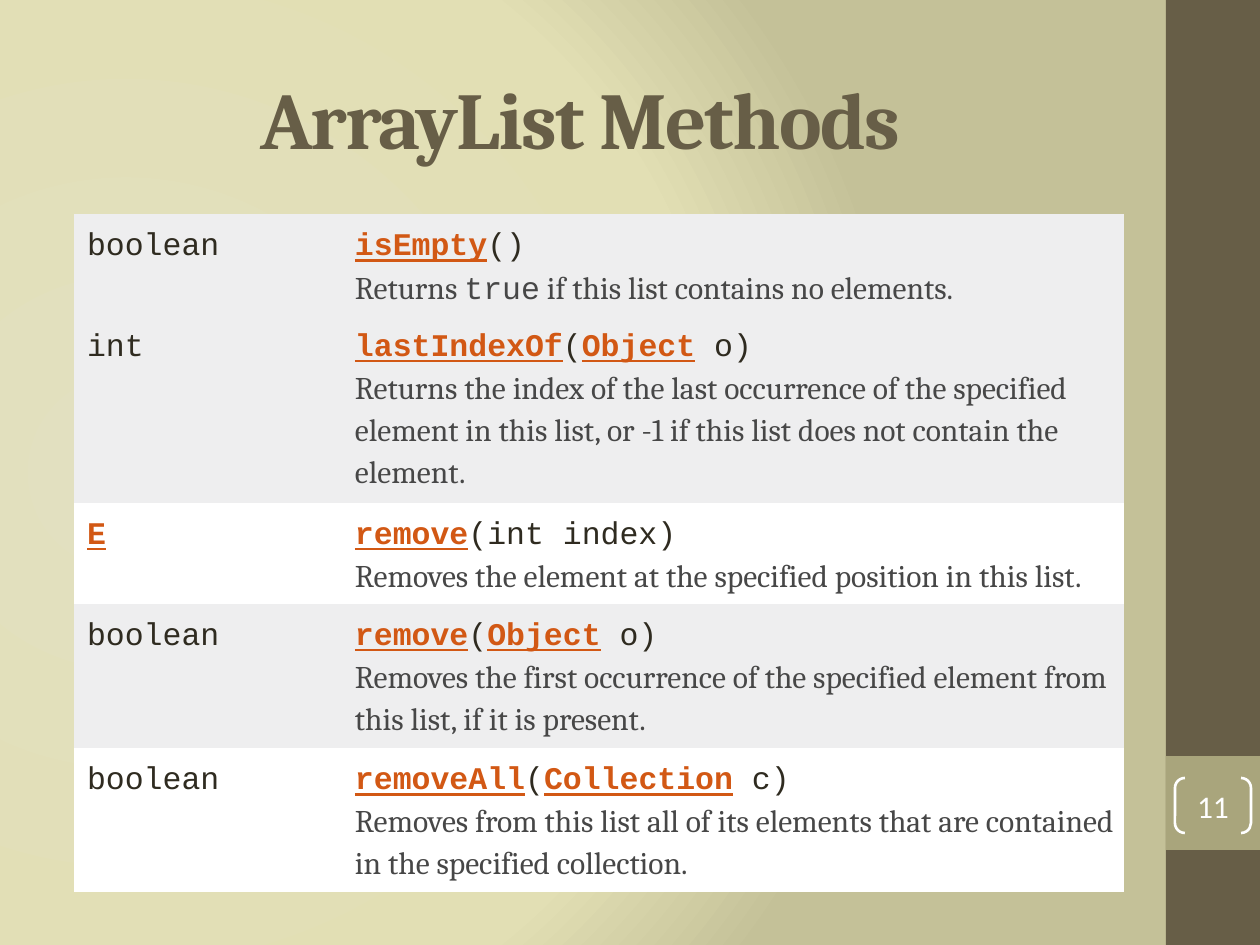
from dataclasses import dataclass

import lxml.etree
import pptx
import pptx.dml.color
import pptx.enum.shapes
import pptx.enum.text
import pptx.oxml
import pptx.oxml.ns
import pptx.util

PX = pptx.util.Inches(1) / 126
NO_GRID_STYLE = "{2D5ABB26-0587-4C30-8999-92F81FD0307C}"
COLOURS = {
    "glow": "E2E0C0", "sand": "E2DFB4", "khaki": "C4C198",
    "brown": "675E47", "olive": "A9A57C", "white": "FFFFFF",
    "grey": "EEEEEF", "ink": "2F2B20", "link": "D25814", "prose": "474747",
}
MIDDLE = pptx.enum.text.MSO_ANCHOR.MIDDLE
CENTER = pptx.enum.text.PP_ALIGN.CENTER
SHAPES = pptx.enum.shapes.MSO_SHAPE


@dataclass(frozen=True)
class Style:
    font: str
    colour: str
    size: int = 18
    bold: bool = False
    underline: bool = False


@dataclass(frozen=True)
class Span:
    text: str
    style: Style


@dataclass(frozen=True)
class Method:
    returns: Span
    signature: list[Span]
    description: list[Span]
    fill: str
    height: int


@dataclass(frozen=True)
class Panel:
    left: int
    top: int
    width: int
    height: int
    fill: str


CODE = Style("Courier New", "ink")
LINK = Style("Courier New", "link", bold=True, underline=True)
PROSE = Style("Cambria", "prose")
PROSE_CODE = Style("Courier New", "prose")
TITLE = Style("Cambria", "brown", size=46, bold=True)
NUMBER = Style("Calibri", "white")

PANELS = [Panel(1166, 0, 94, 945, "brown"), Panel(1166, 756, 94, 94, "olive")]
COLUMN_WIDTHS = [268, 782]
METHODS = [
    Method(Span("boolean", CODE),
           [Span("isEmpty", LINK), Span("()", CODE)],
           [Span("Returns ", PROSE), Span("true", PROSE_CODE),
            Span(" if this list contains no elements.", PROSE)],
           "grey", 97),
    Method(Span("int", CODE),
           [Span("lastIndexOf", LINK), Span("(", CODE), Span("Object", LINK), Span(" o)", CODE)],
           [Span("Returns the index of the last occurrence of the specified element in "
                 "this list, or -1 if this list does not contain the element.", PROSE)],
           "grey", 181),
    Method(Span("E", LINK),
           [Span("remove", LINK), Span("(int index)", CODE)],
           [Span("Removes the element at the specified position in this list.", PROSE)],
           "white", 97),
    Method(Span("boolean", CODE),
           [Span("remove", LINK), Span("(", CODE), Span("Object", LINK), Span(" o)", CODE)],
           [Span("Removes the first occurrence of the specified element from this list, "
                 "if it is present.", PROSE)],
           "grey", 139),
    Method(Span("boolean", CODE),
           [Span("removeAll", LINK), Span("(", CODE), Span("Collection", LINK), Span(" c)", CODE)],
           [Span("Removes from this list all of its elements that are contained in the "
                 "specified collection.", PROSE)],
           "white", 139),
]


def emu(*lengths: int) -> list[int]:
    return [round(length * PX) for length in lengths]


def rgb(name: str) -> pptx.dml.color.RGBColor:
    return pptx.dml.color.RGBColor.from_string(COLOURS[name])


def add_span(para, span: Span):
    run = para.add_run()
    run.text = span.text
    font = run.font
    font.name = span.style.font
    font.size = pptx.util.Pt(span.style.size)
    font.bold = span.style.bold
    font.underline = span.style.underline
    font.color.rgb = rgb(span.style.colour)
    return run


def paint_background(page) -> None:
    """Fill the page with a circular gradient."""
    fill = page.background.fill
    fill.solid()
    solid = page.element.find(".//" + pptx.oxml.ns.qn("a:solidFill"))
    stops = "".join(
        f'<a:gs pos="{percent * 1000}"><a:srgbClr val="{COLOURS[name]}"/></a:gs>'
        for percent, name in [(0, "glow"), (75, "sand"), (100, "khaki")])
    gradient = pptx.oxml.parse_xml(
        f'<a:gradFill rotWithShape="1" {pptx.oxml.ns.nsdecls("a")}>'
        f'<a:gsLst>{stops}</a:gsLst><a:path path="circle">'
        '<a:fillToRect l="20000" t="50000" r="100000" b="50000"/></a:path></a:gradFill>')
    solid.getparent().replace(solid, gradient)


def add_panel(page, panel: Panel) -> None:
    box = page.shapes.add_shape(
        SHAPES.RECTANGLE, *emu(panel.left, panel.top, panel.width, panel.height))
    box.shadow.inherit = False
    box.fill.solid()
    box.fill.fore_color.rgb = rgb(panel.fill)
    box.line.fill.background()


def add_title(page, text: str) -> None:
    box = page.shapes.add_textbox(*emu(63, 38, 1050, 158))
    frame = box.text_frame
    frame.word_wrap = True
    frame.vertical_anchor = MIDDLE
    para = frame.paragraphs[0]
    para.alignment = CENTER
    run = add_span(para, Span(text, TITLE))
    run.font._element.set("spc", "-100")


def fill_cell(cell, lines: list[list[Span]], fill: str) -> None:
    cell.fill.solid()
    cell.fill.fore_color.rgb = rgb(fill)
    cell.margin_left, cell.margin_top, cell.margin_right, cell.margin_bottom = emu(13, 10, 0, 4)
    frame = cell.text_frame
    for index, spans in enumerate(lines):
        para = frame.add_paragraph() if index else frame.paragraphs[0]
        para.line_spacing = 1.15
        para.space_after = pptx.util.Pt(1.5 if index else 0)
        for span in spans:
            add_span(para, span)


def add_method_table(page, methods: list[Method]) -> None:
    height = sum(method.height for method in methods)
    holder = page.shapes.add_table(
        len(methods), len(COLUMN_WIDTHS), *emu(74, 214, sum(COLUMN_WIDTHS), height))
    table = holder.table
    table.first_row = table.horz_banding = False
    table._tbl.tblPr.find(pptx.oxml.ns.qn("a:tableStyleId")).text = NO_GRID_STYLE
    for column, width in zip(table.columns, emu(*COLUMN_WIDTHS)):
        column.width = width
    for row, method in zip(table.rows, methods):
        row.height = emu(method.height)[0]
        fill_cell(row.cells[0], [[method.returns]], method.fill)
        fill_cell(row.cells[1], [method.signature, method.description], method.fill)


def add_page_number(page, number: str) -> None:
    box = page.shapes.add_shape(SHAPES.DOUBLE_BRACKET, *emu(1175, 778, 76, 55))
    box.adjustments[0] = 0.18
    box.shadow.inherit = False
    box.fill.background()
    box.line.color.rgb = rgb("white")
    box.line.width = pptx.util.Pt(1.5)
    frame = box.text_frame
    frame.margin_left = frame.margin_top = frame.margin_right = frame.margin_bottom = 0
    frame.vertical_anchor = MIDDLE
    para = frame.paragraphs[0]
    para.alignment = CENTER
    add_span(para, Span(number, NUMBER))


def main() -> None:
    deck = pptx.Presentation()
    deck.slide_width, deck.slide_height = emu(1260, 945)
    page = deck.slides.add_slide(deck.slide_layouts[6])
    paint_background(page)
    for panel in PANELS:
        add_panel(page, panel)
    add_title(page, "ArrayList Methods ")
    add_method_table(page, METHODS)
    add_page_number(page, "11")
    deck.save("out.pptx")


if __name__ == "__main__":
    main()
